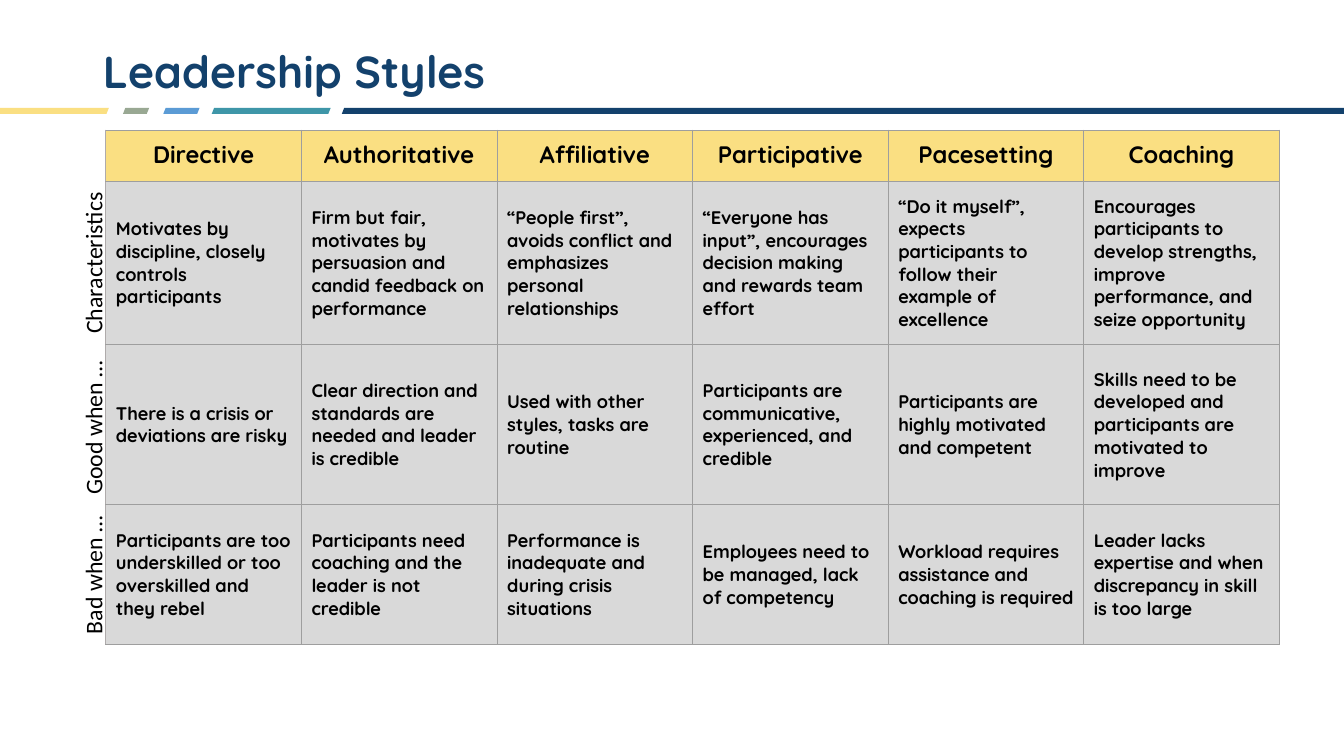
"""Build the Leadership Styles comparison slide."""
from lxml.etree import SubElement
from pptx import Presentation
from pptx.dml.color import RGBColor
from pptx.enum.shapes import MSO_SHAPE as SHAPE
from pptx.enum.text import MSO_ANCHOR as ANCHOR, PP_ALIGN as ALIGN
from pptx.oxml.ns import qn
from pptx.util import Inches, Pt

NAVY = RGBColor(0x13, 0x41, 0x6C)
TEAL = RGBColor(0x3E, 0x96, 0xA8)
BLUE = RGBColor(0x5B, 0x9B, 0xD5)
SAGE = RGBColor(0x99, 0xA8, 0x93)
YELLOW = RGBColor(0xFA, 0xDF, 0x82)
GRAY = RGBColor(0xD9, 0xD9, 0xD9)
BLACK = RGBColor(0, 0, 0)
RULE = RGBColor(0x9E, 0x9E, 0x9E)
STUB_RULE = RGBColor(0xAF, 0xAB, 0xAB)

STRIPES = [(-0.04, 1.12, YELLOW), (1.22, 0.26, SAGE), (1.62, 0.36, BLUE),
           (2.1, 1.18, TEAL), (3.39, 9.98, NAVY)]
COL_WIDTHS = [0.36] + [1.94] * 6
ROW_HEIGHTS = [0.51, 1.62, 1.59, 1.38]
ROWS = [
    ["", "Directive", "Authoritative", "Affiliative", "Participative",
     "Pacesetting", "Coaching"],
    ["Characteristics",
     "Motivates by discipline, closely controls participants",
     "Firm but fair, motivates by persuasion and candid feedback on performance",
     "“People first”, avoids conflict and emphasizes personal relationships",
     "“Everyone has input”, encourages decision making and rewards team effort",
     "“Do it myself”, expects participants to follow their example of excellence",
     "Encourages participants to develop strengths, improve performance, "
     "and seize opportunity"],
    ["Good when …",
     "There is a crisis or deviations are risky",
     "Clear direction and standards are needed and leader is credible",
     "Used with other styles, tasks are routine",
     "Participants are communicative, experienced, and credible",
     "Participants are highly motivated and competent",
     "Skills need to be developed and participants are motivated to improve"],
    ["Bad when …",
     "Participants are too underskilled or too overskilled and they rebel",
     "Participants need coaching and the leader is not credible",
     "Performance is inadequate and during crisis situations",
     "Employees need to be managed, lack of competency",
     "Workload requires assistance and coaching is required",
     "Leader lacks expertise and when discrepancy in skill is too large"],
]


def add_run(p, text, font, size, color, bold):
    r = p.add_run()
    r.text = text
    r.font.name, r.font.size, r.font.bold = font, Pt(size), bold
    r.font.color.rgb = color


def set_border(cell, side, color=None, width=0.75):
    ln = SubElement(cell._tc.get_or_add_tcPr(), qn(f"a:ln{side}"), w=str(Pt(width)))
    if color is None:
        SubElement(ln, qn("a:noFill"))
    else:
        SubElement(SubElement(ln, qn("a:solidFill")), qn("a:srgbClr"), val=str(color))


prs = Presentation()
prs.slide_width, prs.slide_height = Inches(13.33), Inches(7.5)
s = prs.slides.add_slide(prs.slide_layouts[5])

for left, width, color in STRIPES:
    sp = s.shapes.add_shape(SHAPE.PARALLELOGRAM, Inches(left), Inches(1.07),
                            Inches(width), Inches(0.06))
    sp.adjustments[0] = 0.4
    sp.shadow.inherit = False
    sp.fill.solid()
    sp.fill.fore_color.rgb = color
    sp.line.fill.background()

title = s.shapes.title
title.left, title.top = Inches(0.92), Inches(0.4)
title.width, title.height = Inches(11.5), Inches(0.67)
tf = title.text_frame
tf.word_wrap = True
tf.vertical_anchor = ANCHOR.MIDDLE
p = tf.paragraphs[0]
p.alignment, p.line_spacing = ALIGN.LEFT, 0.9
add_run(p, "Leadership Styles", "Quicksand", 32, NAVY, True)

table = s.shapes.add_table(len(ROWS), len(COL_WIDTHS), Inches(0.69), Inches(1.29),
                           Inches(sum(COL_WIDTHS)), Inches(sum(ROW_HEIGHTS))).table
table.first_row = table.horz_banding = False
for column, width in zip(table.columns, COL_WIDTHS):
    column.width = Inches(width)
for row, height in zip(table.rows, ROW_HEIGHTS):
    row.height = Inches(height)

for i, texts in enumerate(ROWS):
    for j, text in enumerate(texts):
        cell = table.cell(i, j)
        header, stub = i == 0, j == 0
        cell.margin_left = cell.margin_right = Inches(0.1)
        cell.margin_top = cell.margin_bottom = Inches(0.1)
        cell.vertical_anchor = ANCHOR.TOP if header else ANCHOR.MIDDLE
        for side in "LRTB":
            if (stub and side == "R") or (j == 1 and side == "L"):
                set_border(cell, side, STUB_RULE, 1)
            else:
                set_border(cell, side, None if stub else RULE)
        if stub:
            cell.fill.background()
            cell._tc.get_or_add_tcPr().set("vert", "vert270")
        else:
            cell.fill.solid()
            cell.fill.fore_color.rgb = YELLOW if header else GRAY
        p = cell.text_frame.paragraphs[0]
        p.alignment = ALIGN.CENTER if header or (stub and i == 1) else ALIGN.LEFT
        if text:
            add_run(p, text, "Calibri" if stub else "Quicksand",
                    17 if header or stub else 13, BLACK, not stub)

prs.save("out.pptx")
